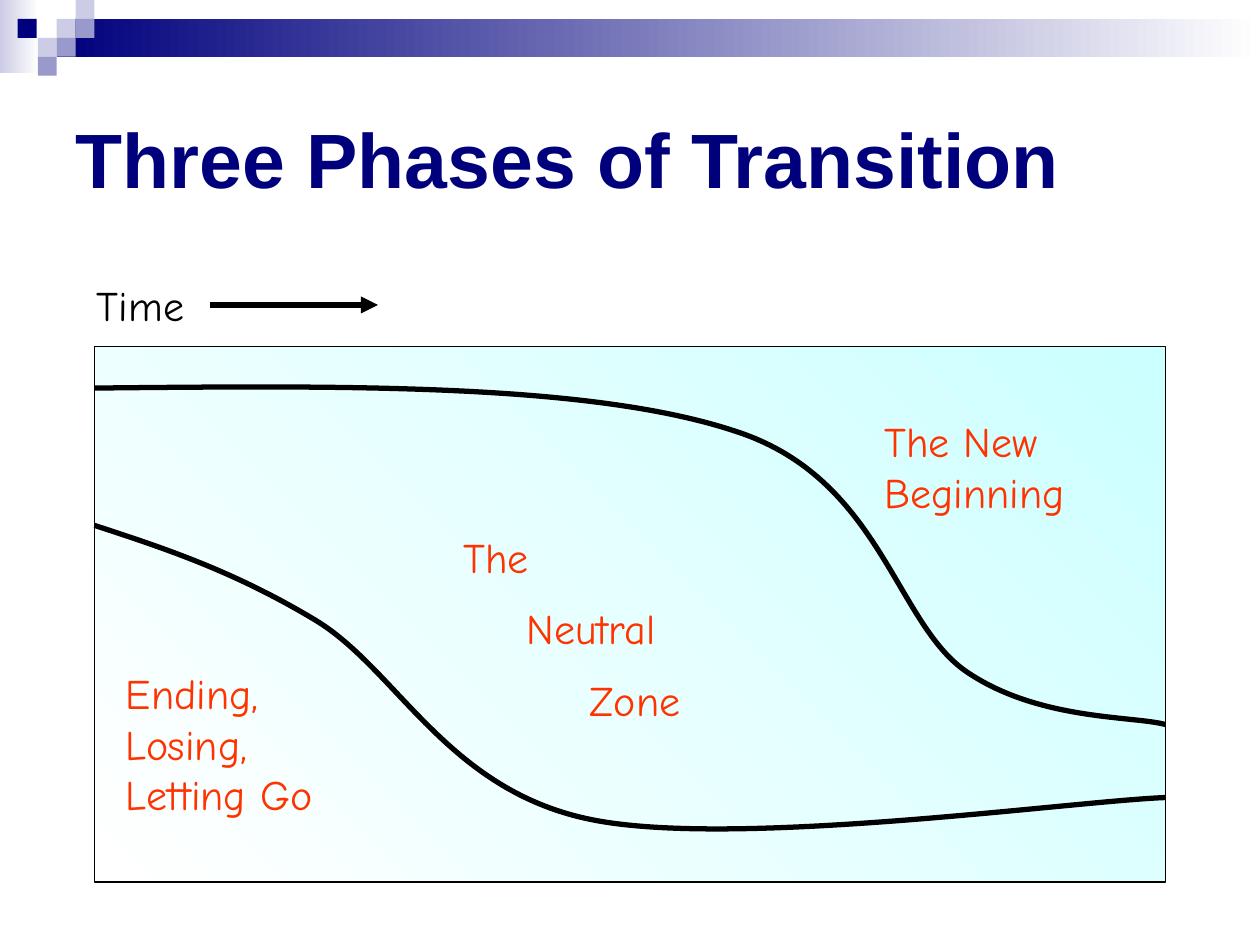
import pptx
import pptx.dml.color
import pptx.enum.shapes
import pptx.enum.text
import pptx.oxml
import pptx.oxml.ns
import pptx.util
from dataclasses import dataclass

Inches = pptx.util.Inches
Pt = pptx.util.Pt


@dataclass(frozen=True)
class Theme:
    navy: str = "00007D"
    mid: str = "9999CC"
    pale: str = "CCCCE6"
    white: str = "FFFFFF"
    aqua: str = "CCFFFF"
    black: str = "000000"
    red: str = "FF3300"
    title_font: str = "Arial"
    label_font: str = "Comic Neue"
    title_size: int = 44
    label_size: int = 24


theme = Theme()
rgb = pptx.dml.color.RGBColor.from_string

deck = pptx.Presentation()
deck.slide_width, deck.slide_height = Inches(10), Inches(7.5)
page = deck.slides.add_slide(deck.slide_layouts[5])
shapes = page.shapes


def add_rectangle(left, top, width, height, colors, angle=0):
    """Borderless rectangle: one colour is solid, two make a gradient."""
    box = shapes.add_shape(pptx.enum.shapes.MSO_SHAPE.RECTANGLE,
                           Inches(left), Inches(top), Inches(width), Inches(height))
    box.shadow.inherit = False
    box.line.fill.background()
    if len(colors) == 1:
        box.fill.solid()
        box.fill.fore_color.rgb = rgb(colors[0])
    else:
        box.fill.gradient()
        box.fill.gradient_angle = angle
        for stop, color in zip(box.fill.gradient_stops, colors):
            stop.color.rgb = rgb(color)
    return box


def style_text(frame, font, size, color, bold=False):
    for para in frame.paragraphs:
        para.alignment = pptx.enum.text.PP_ALIGN.LEFT
        for span in para.runs:
            span.font.name = font
            span.font.size = Pt(size)
            span.font.bold = bold
            span.font.color.rgb = rgb(color)


# Header band and checkered squares
add_rectangle(0, 0, 0.31, 0.58, [theme.pale, theme.white])
add_rectangle(0.45, 0.15, 9.55, 0.3, [theme.navy, theme.white])
square = 0.15
for left, top, color in [
    (0.45, 0.15, theme.pale), (0.6, 0, theme.pale), (0.6, 0.15, theme.mid),
    (0.3, 0.3, theme.pale), (0.14, 0.15, theme.navy),
    (0.45, 0.3, theme.mid), (0.3, 0.45, theme.mid),
]:
    add_rectangle(left, top, square, square, [color])

# Title
title = shapes.title
title.left, title.top = Inches(0.5), Inches(0.5)
title.width, title.height = Inches(9), Inches(1.5)
title.text_frame.text = "Three Phases of Transition"
title.text_frame.vertical_anchor = pptx.enum.text.MSO_ANCHOR.MIDDLE
style_text(title.text_frame, theme.title_font, theme.title_size, theme.navy, bold=True)

# Diagram panel, shaded from bottom left to top right
panel = add_rectangle(0.75, 2.75, 8.5, 4.25, [theme.white, theme.aqua], angle=45)
panel.line.color.rgb = rgb(theme.black)
panel.line.width = Pt(0.75)

# Phase boundaries: a start, then two control points and an end per segment
ending_curve = [
    (0.75, 4.17),
    (1.3, 4.35), (1.85, 4.53), (2.5, 4.92),
    (3.15, 5.31), (3.54, 6.26), (4.67, 6.5),
    (5.79, 6.74), (8.49, 6.36), (9.25, 6.33),
]
beginning_curve = [
    (0.75, 3.08),
    (2.72, 3.06), (4.68, 3.04), (5.83, 3.42),
    (6.99, 3.79), (7.1, 4.94), (7.67, 5.33),
    (8.24, 5.72), (8.99, 5.68), (9.25, 5.75),
]
for points in (ending_curve, beginning_curve):
    start, *rest = [(Inches(x), Inches(y)) for x, y in points]
    builder = shapes.build_freeform(*start)
    builder.add_line_segments(rest, close=False)
    curve = builder.convert_to_shape()
    curve.shadow.inherit = False
    curve.fill.background()
    curve.line.color.rgb = rgb(theme.black)
    curve.line.width = Pt(3)
    # Turn every three straight steps into one Bezier segment
    steps = list(curve._element.iter(pptx.oxml.ns.qn("a:lnTo")))
    for i in range(0, len(steps), 3):
        bezier = pptx.oxml.parse_xml(
            f'<a:cubicBezTo {pptx.oxml.ns.nsdecls("a")}/>')
        steps[i].addprevious(bezier)
        for step in steps[i:i + 3]:
            bezier.append(step[0])
            step.getparent().remove(step)

# Labels
for text, left, top, width, height, color in [
    ("Ending, Losing, Letting Go", 0.9, 5.25, 2, 1.3, theme.red),
    ("The\n\tNeutral\n\t\tZone", 3.58, 4.17, 3.5, 1.7, theme.red),
    ("The New Beginning", 6.92, 3.25, 2.17, 0.9, theme.red),
    ("Time", 0.67, 2.17, 2.92, 0.5, theme.black),
]:
    label = shapes.add_textbox(Inches(left), Inches(top), Inches(width), Inches(height))
    frame = label.text_frame
    frame.word_wrap = True
    frame.text = text
    style_text(frame, theme.label_font, theme.label_size, color)
    for para in frame.paragraphs[1:]:
        para.space_before = Pt(theme.label_size / 2)

# Time arrow
arrow = shapes.add_connector(pptx.enum.shapes.MSO_CONNECTOR.STRAIGHT,
                             Inches(1.67), Inches(2.42), Inches(3), Inches(2.42))
arrow.line.color.rgb = rgb(theme.black)
arrow.line.width = Pt(3.25)
arrow.line._get_or_add_ln().append(pptx.oxml.parse_xml(
    f'<a:tailEnd {pptx.oxml.ns.nsdecls("a")} type="triangle"/>'))
arrow._element.spPr.append(pptx.oxml.parse_xml(
    f'<a:effectLst {pptx.oxml.ns.nsdecls("a")}/>'))

deck.save("out.pptx")
